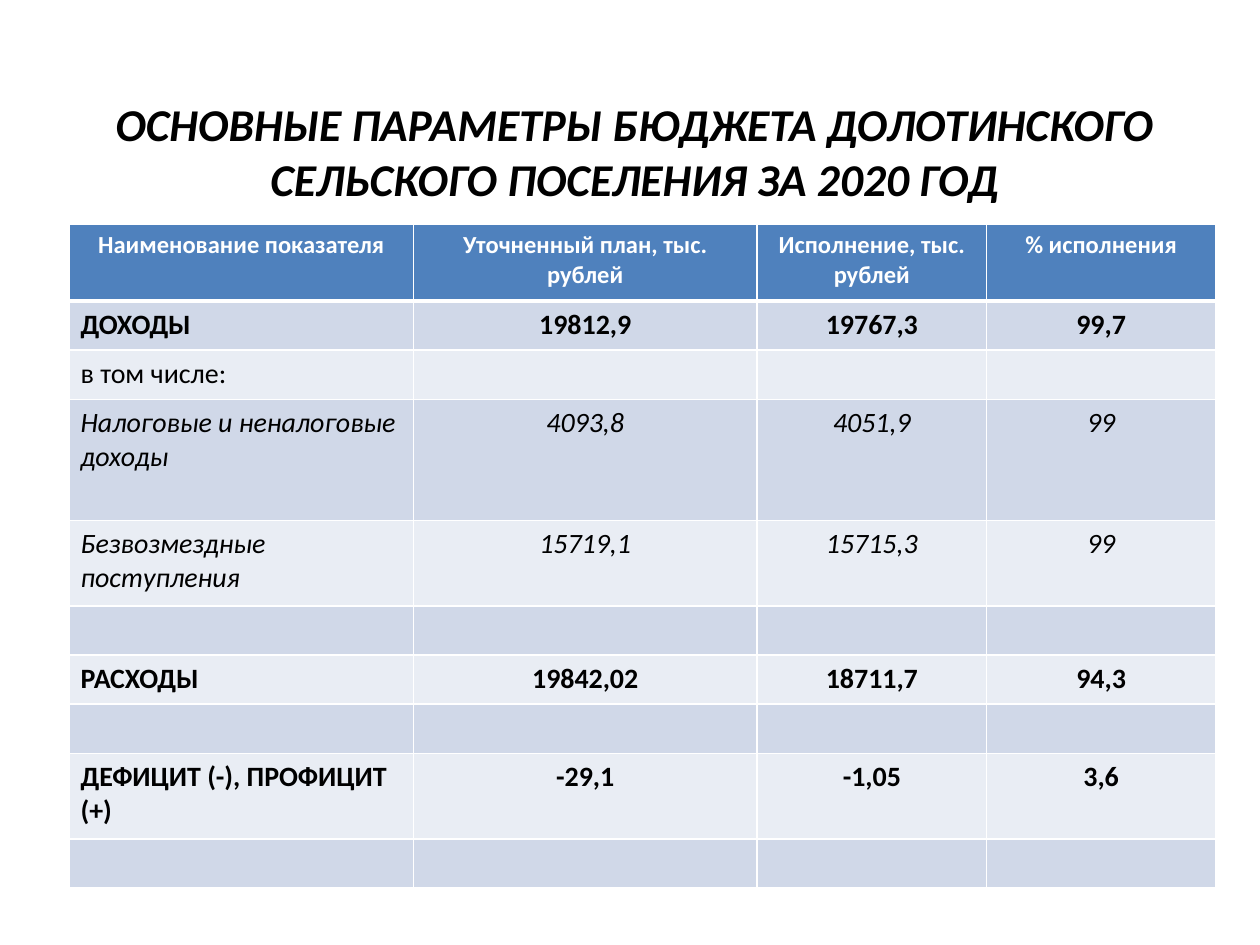
from dataclasses import dataclass

from lxml import etree
from pptx import Presentation, util as u
from pptx.dml.color import RGBColor
from pptx.enum import text
from pptx.oxml.ns import qn

SLIDE_WIDTH, SLIDE_HEIGHT = u.Inches(10), u.Inches(7.5)
BLACK = RGBColor(0x00, 0x00, 0x00)
WHITE = RGBColor(0xFF, 0xFF, 0xFF)
HEADER_BLUE = RGBColor(0x4F, 0x81, 0xBD)
BAND_FILLS = (RGBColor(0xE9, 0xED, 0xF4), RGBColor(0xD0, 0xD8, 0xE8))
FONT = "Calibri"

TABLE_LEFT, TABLE_TOP, TABLE_WIDTH = 0.55, 1.78, 9.1
COLUMN_SHARES = (3, 3, 2, 2)
SINGLE, HEADER, DOUBLE, TALL = 0.39, 0.61, 0.68, 0.96


@dataclass(frozen=True)
class BudgetRow:
    height: float
    values: tuple[str, ...] = ("", "", "", "")
    bold: bool = False
    italic: bool = False
    size: int = 16


ROWS = (
    BudgetRow(HEADER, ("Наименование показателя", "Уточненный план, тыс. рублей",
                       "Исполнение, тыс. рублей", "% исполнения"), bold=True, size=14),
    BudgetRow(SINGLE, ("ДОХОДЫ", "19812,9", "19767,3", "99,7"), bold=True),
    BudgetRow(SINGLE, ("в том числе:", "", "", "")),
    BudgetRow(TALL, ("Налоговые и неналоговые доходы", "4093,8", "4051,9", "99"), italic=True),
    BudgetRow(DOUBLE, ("Безвозмездные поступления", "15719,1", "15715,3", "99"), italic=True),
    BudgetRow(SINGLE),
    BudgetRow(SINGLE, ("РАСХОДЫ", "19842,02", "18711,7", "94,3"), bold=True),
    BudgetRow(SINGLE),
    BudgetRow(DOUBLE, ("ДЕФИЦИТ (-), ПРОФИЦИТ (+)", "-29,1", "-1,05", "3,6"), bold=True),
    BudgetRow(SINGLE),
)


def add_run(paragraph, content: str, size: float, color: RGBColor,
            bold: bool, italic: bool) -> None:
    run = paragraph.add_run()
    run.text = content
    font = run.font
    font.name, font.size, font.bold, font.italic = FONT, u.Pt(size), bold, italic
    font.color.rgb = color


def set_borders(cell, top: float, bottom: float) -> None:
    """Draw white borders; widths are in points."""
    properties = cell._tc.get_or_add_tcPr()
    widths = {"a:lnL": 1, "a:lnR": 1, "a:lnT": top, "a:lnB": bottom}
    for position, (tag, width) in enumerate(widths.items()):
        line = etree.Element(qn(tag), w=str(u.Pt(width)))
        fill = etree.SubElement(line, qn("a:solidFill"))
        etree.SubElement(fill, qn("a:srgbClr"), val=str(WHITE))
        properties.insert(position, line)


def add_title(slide) -> None:
    title = slide.shapes.title
    title.left, title.top = u.Inches(0.12), u.Inches(0.62)
    title.width, title.height = u.Inches(9.84), u.Inches(1.15)
    frame = title.text_frame
    frame.word_wrap = True
    frame.vertical_anchor = text.MSO_ANCHOR.MIDDLE
    paragraph = frame.paragraphs[0]
    paragraph.alignment = text.PP_ALIGN.CENTER
    add_run(paragraph, "ОСНОВНЫЕ ПАРАМЕТРЫ БЮДЖЕТА ДОЛОТИНСКОГО СЕЛЬСКОГО "
            "ПОСЕЛЕНИЯ ЗА 2020 ГОД", 26, BLACK, bold=True, italic=True)


def fill_cell(cell, content: str, row: BudgetRow, row_index: int, column_index: int) -> None:
    is_header = row_index == 0
    cell.fill.solid()
    cell.fill.fore_color.rgb = HEADER_BLUE if is_header else BAND_FILLS[row_index % 2]
    set_borders(cell, top=3 if row_index == 1 else 1, bottom=3 if is_header else 1)
    cell.margin_left = cell.margin_right = u.Inches(0.09)
    cell.margin_top = cell.margin_bottom = u.Inches(0.05)
    paragraph = cell.text_frame.paragraphs[0]
    if not content:
        etree.SubElement(paragraph._p, qn("a:endParaRPr"), sz=str(row.size * 100))
        return
    centred = is_header or column_index > 0
    paragraph.alignment = text.PP_ALIGN.CENTER if centred else text.PP_ALIGN.LEFT
    add_run(paragraph, content, row.size, WHITE if is_header else BLACK, row.bold, row.italic)


def add_budget_table(slide) -> None:
    height = sum(row.height for row in ROWS)
    table = slide.shapes.add_table(
        len(ROWS), len(COLUMN_SHARES), u.Inches(TABLE_LEFT), u.Inches(TABLE_TOP),
        u.Inches(TABLE_WIDTH), u.Inches(height)).table
    for column, share in zip(table.columns, COLUMN_SHARES):
        column.width = u.Inches(TABLE_WIDTH * share / sum(COLUMN_SHARES))
    for row_index, row in enumerate(ROWS):
        table.rows[row_index].height = u.Inches(row.height)
        for column_index, content in enumerate(row.values):
            fill_cell(table.cell(row_index, column_index), content, row, row_index, column_index)


def main() -> None:
    presentation = Presentation()
    presentation.slide_width, presentation.slide_height = SLIDE_WIDTH, SLIDE_HEIGHT
    slide = presentation.slides.add_slide(presentation.slide_layouts.get_by_name("Title Only"))
    add_title(slide)
    add_budget_table(slide)
    presentation.save("out.pptx")


if __name__ == "__main__":
    main()
